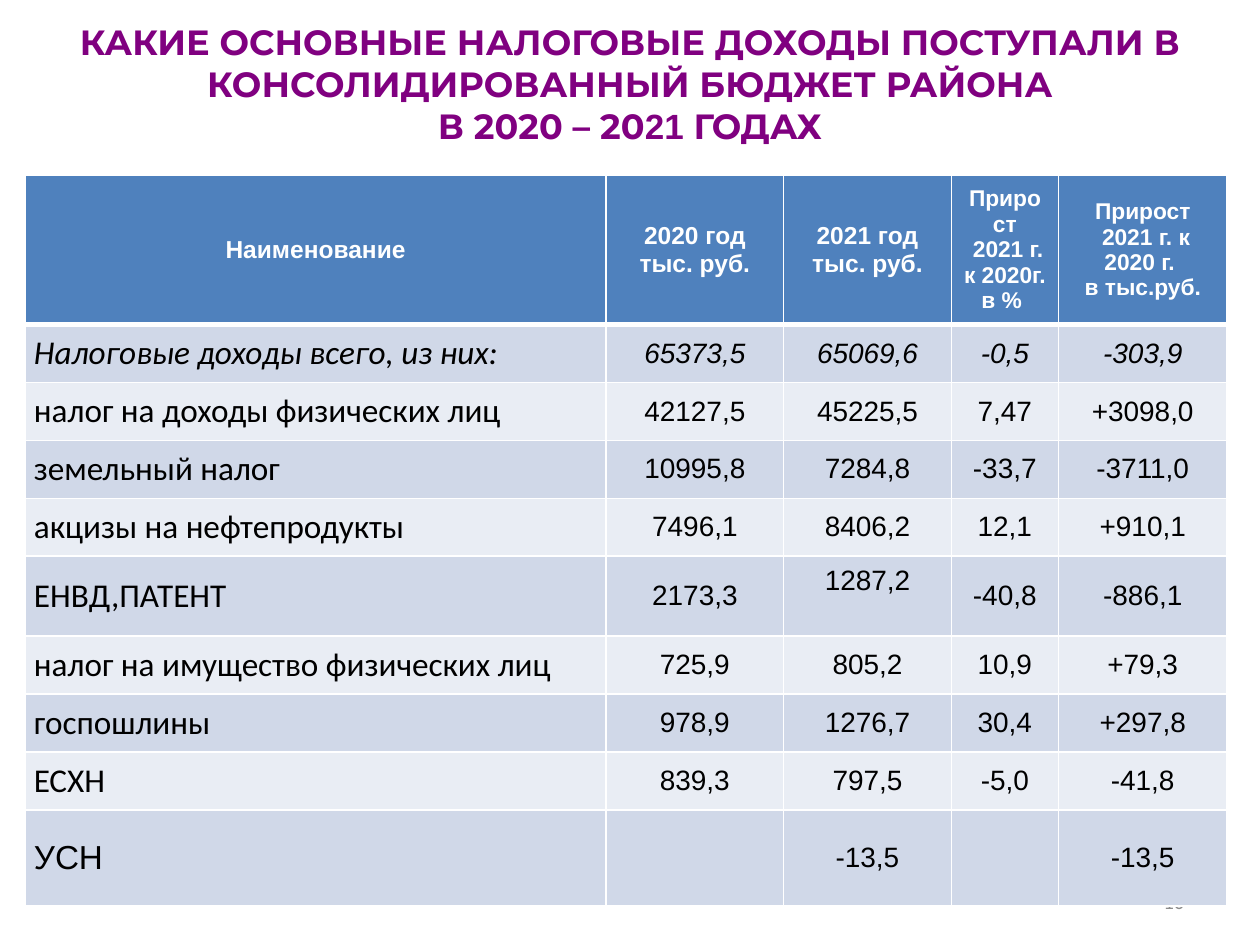
import pptx
import pptx.util
import pptx.dml.color
import pptx.enum.text
import pptx.oxml
import pptx.oxml.ns

COLORS = {"title": "800080", "header": "4F81BD", "odd": "D0D8E8", "even": "E9EDF4",
          "white": "FFFFFF", "black": "000000", "page": "8C8C8C"}
ALIGN = pptx.enum.text.PP_ALIGN
MIDDLE = pptx.enum.text.MSO_ANCHOR.MIDDLE


class Deck:
    """Slide on a grid of 100 columns by 75 rows."""

    def __init__(self):
        self.prs = pptx.Presentation()
        self.prs.slide_width = pptx.util.Inches(10)
        self.prs.slide_height = pptx.util.Inches(7.5)
        self.s = self.prs.slides.add_slide(self.prs.slide_layouts[5])

    def grid(self, *units):
        return [round(self.prs.slide_width * u / 100) for u in units]

    def style(self, p, size, color, font="Arial", align=ALIGN.CENTER, bold=False, italic=False):
        p.alignment = align
        f = p.font
        f.name, f.size, f.bold, f.italic = font, pptx.util.Pt(size), bold, italic
        f.color.rgb = pptx.dml.color.RGBColor.from_string(COLORS[color])

    def fill_text(self, tf, text, **style):
        tf.text = text
        for p in tf.paragraphs:
            self.style(p, **style)

    def title(self, box, text):
        sp = self.s.shapes.title
        sp.left, sp.top, sp.width, sp.height = self.grid(*box)
        tf = sp.text_frame
        tf.vertical_anchor = pptx.enum.text.MSO_ANCHOR.TOP
        tf.auto_size = pptx.enum.text.MSO_AUTO_SIZE.SHAPE_TO_FIT_TEXT
        self.fill_text(tf, text, size=20, color="title", font="Montserrat", bold=True)
        return tf

    def text(self, box, text, **style):
        tf = self.s.shapes.add_textbox(*self.grid(*box)).text_frame
        tf.word_wrap = True
        tf.vertical_anchor = MIDDLE
        self.fill_text(tf, text, **style)

    def borders(self, cell, **widths):
        tcPr = cell._tc.get_or_add_tcPr()
        for side in "LRTB":
            tcPr.append(pptx.oxml.parse_xml(
                f'<a:ln{side} {pptx.oxml.ns.nsdecls("a")} w="{pptx.util.Pt(widths.get(side, 1))}">'
                f'<a:solidFill><a:srgbClr val="{COLORS["white"]}"/></a:solidFill></a:ln{side}>'))

    def cell(self, cell, text, fill, edges, **style):
        self.borders(cell, **edges)
        cell.fill.solid()
        cell.fill.fore_color.rgb = pptx.dml.color.RGBColor.from_string(COLORS[fill])
        cell.vertical_anchor = MIDDLE
        if text:
            self.fill_text(cell.text_frame, text, **style)

    def table(self, left, top, cols, rows):
        table = self.s.shapes.add_table(len(rows), len(cols), *self.grid(
            left, top, sum(cols), sum(rows))).table
        for col, width in zip(table.columns, self.grid(*cols)):
            col.width = width
        for row, height in zip(table.rows, self.grid(*rows)):
            row.height = height
        return table


HEADER = ["Наименование", "2020 год\nтыс. руб.", "2021 год\nтыс. руб.",
          "Прирост\n 2021 г. к 2020г. \nв % ", "Прирост\n 2021 г. к 2020 г. \nв тыс.руб."]
TAXES = [
    ["Налоговые доходы всего, из них:", "65373,5", "65069,6", "-0,5", "-303,9"],
    ["налог на доходы физических лиц", "42127,5", "45225,5", "7,47", "+3098,0"],
    ["земельный налог", "10995,8", "7284,8", "-33,7", "-3711,0"],
    ["акцизы на нефтепродукты", "7496,1", "8406,2", "12,1", "+910,1"],
    ["ЕНВД,ПАТЕНТ", "2173,3", "1287,2", "-40,8", "-886,1"],
    ["налог на имущество физических лиц", "725,9", "805,2", "10,9", "+79,3"],
    ["госпошлины", "978,9", "1276,7", "30,4", "+297,8"],
    ["ЕСХН", "839,3", "797,5", "-5,0", "-41,8"],
    ["УСН", "", "-13,5", "", "-13,5"],
]


def main():
    deck = Deck()

    # Title, with the year's last digits in Arial
    tf = deck.title((0, 1.1, 100, 11), "КАКИЕ ОСНОВНЫЕ НАЛОГОВЫЕ ДОХОДЫ ПОСТУПАЛИ В\n"
                    "КОНСОЛИДИРОВАННЫЙ БЮДЖЕТ РАЙОНА\nВ 2020 – 20")
    last = tf.paragraphs[-1]
    for text, font in (("21 ", "Arial"), ("ГОДАХ", "Montserrat")):
        r = last.add_run()
        r.text, r.font.name = text, font

    # Page number, behind the table
    deck.text((71.7, 69.5, 23.3, 4), "10", size=12, color="page",
              font="Calibri", align=ALIGN.RIGHT)

    # Table header
    table = deck.table(2, 13.9, cols=[46.1, 14.1, 13.3, 8.5, 13.4],
                       rows=[11.7] + [4.6] * 4 + [6.35] + [4.6] * 3 + [7.6])
    for j, text in enumerate(HEADER):
        deck.cell(table.cell(0, j), text, "header", {"B": 3},
                  size=14 if j < 3 else 13, color="white", bold=True)

    # Tax rows: name on the left, centred figures
    for i, row in enumerate(TAXES, 1):
        for j, text in enumerate(row):
            look = dict(size=16, color="black", italic=i == 1)
            cell = table.cell(i, j)
            if j == 0:
                look.update(size=19, align=ALIGN.LEFT,
                            font="Arial" if text == "УСН" else "Calibri")
                cell.margin_left = cell.margin_right = pptx.util.Inches(0.07)
                cell.margin_top = cell.margin_bottom = pptx.util.Inches(0.07)
            deck.cell(cell, text, "odd" if i % 2 else "even", {"T": 3} if i == 1 else {}, **look)

    # The 2021 figure of the patent row sits above the middle
    table.cell(5, 2).margin_bottom = pptx.util.Inches(0.29)

    deck.prs.save("out.pptx")


if __name__ == "__main__":
    main()
